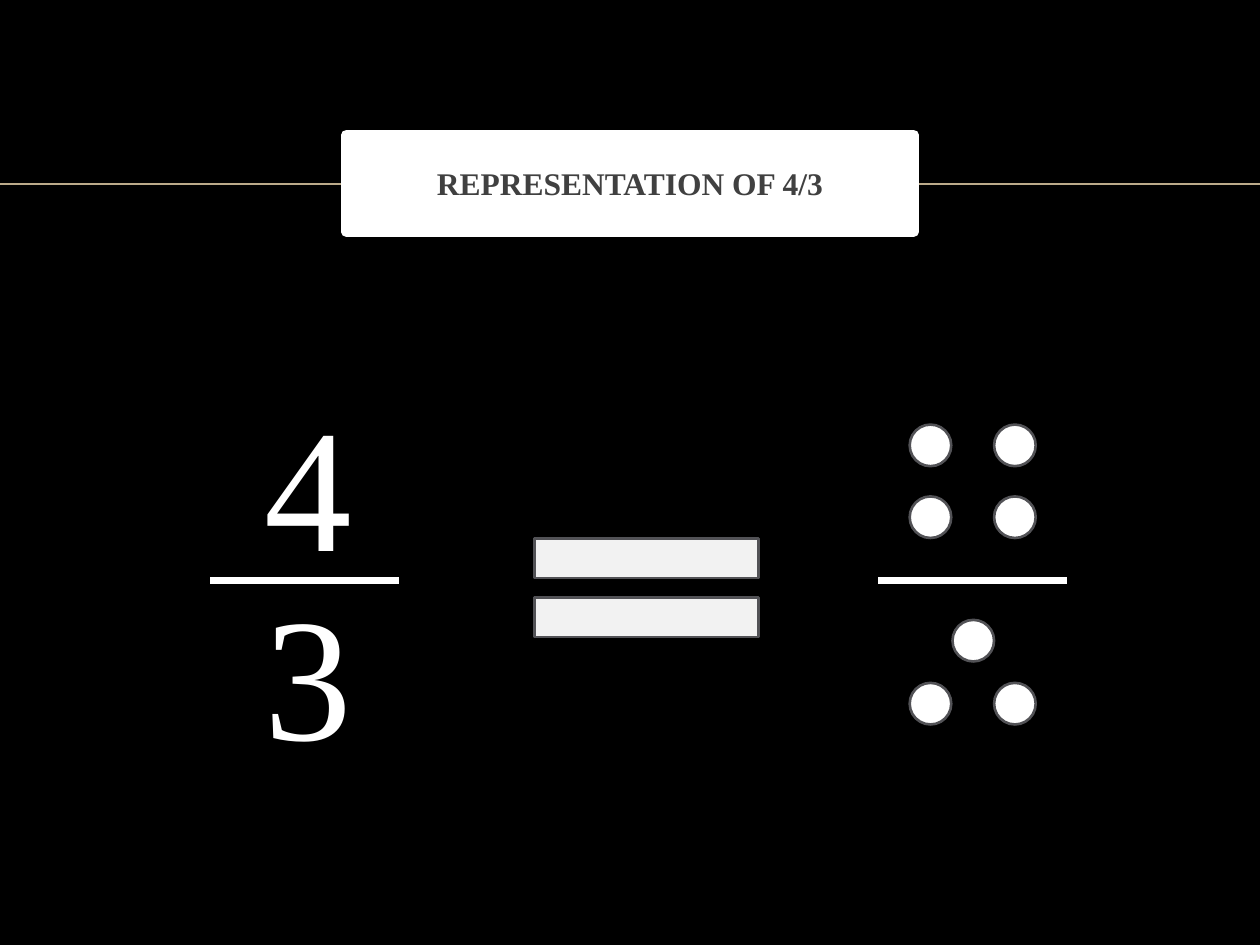
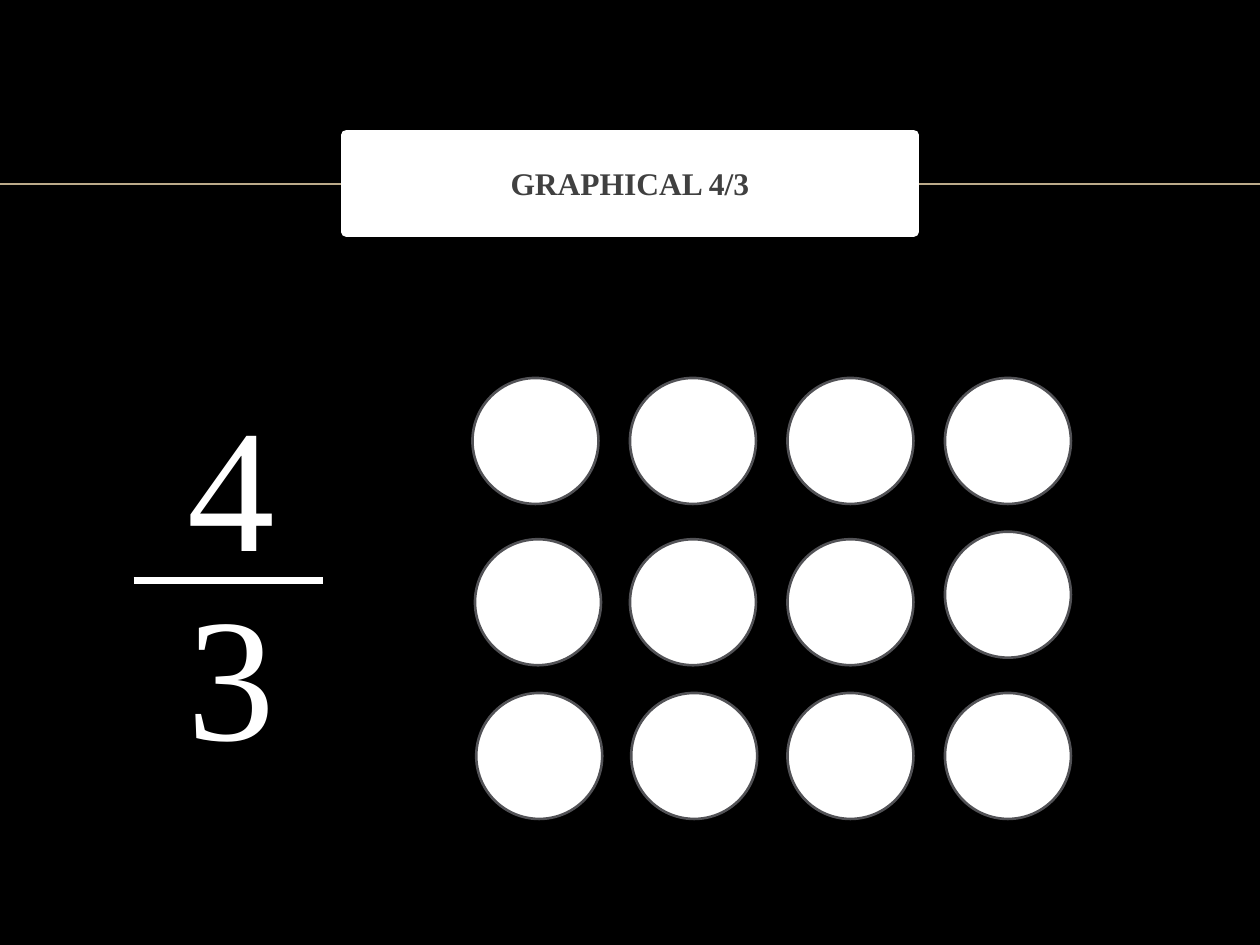
from dataclasses import dataclass

from lxml import etree
from pptx import Presentation
from pptx.dml.color import RGBColor
from pptx.enum.shapes import MSO_CONNECTOR, MSO_SHAPE
from pptx.enum.text import MSO_ANCHOR, MSO_AUTO_SIZE, PP_ALIGN
from pptx.oxml.ns import qn
from pptx.shapes.autoshape import Shape
from pptx.shapes.connector import Connector
from pptx.slide import Slide
from pptx.util import Inches, Pt

OVAL = MSO_SHAPE.OVAL
EQUAL_SIGN = MSO_SHAPE.MATH_EQUAL
STRAIGHT = MSO_CONNECTOR.STRAIGHT
MIDDLE = MSO_ANCHOR.MIDDLE
CENTER = PP_ALIGN.CENTER
GROW = MSO_AUTO_SIZE.SHAPE_TO_FIT_TEXT
FIXED = MSO_AUTO_SIZE.NONE

COLORS = {
    "background": "000000",
    "white": "FFFFFF",
    "rule": "BBAA8A",
    "title": "404040",
    "outline": "525256",
    "equals": "F2F2F2",
}
FONT = "Times New Roman"
SLIDE_WIDTH, SLIDE_HEIGHT = 10, 7.5
TITLE_ONLY = 5
RULE_Y = 1.46
BAR_Y, BAR_WIDTH = 4.61, 1.5
DIGIT_INDENT = 0.33
DIGIT_WIDTH, DIGIT_HEIGHT = 0.86, 1.78
DOT_SIZE, CIRCLE_SIZE = 0.33, 1


@dataclass(frozen=True)
class Box:
    left: float
    top: float
    width: float
    height: float

    def lengths(self) -> tuple:
        return tuple(map(Inches, (self.left, self.top, self.width, self.height)))


@dataclass(frozen=True)
class Row:
    top: float
    lefts: tuple


TITLE_BOX = Box(2.75, 1.07, 4.5, 0.77)
EQUALS_BOX = Box(3.92, 4, 2.42, 1.33)

# Four dots over three dots
DOT_PAIR = (7.22, 7.89)
DOT_ROWS = (
    Row(3.37, DOT_PAIR),
    Row(3.94, DOT_PAIR),
    Row(4.92, (7.56,)),
    Row(5.42, DOT_PAIR),
)

# Three rows of four circles; the last one of the middle row sits higher
CIRCLE_ROWS = (
    Row(3, (3.75, 5, 6.25, 7.5)),
    Row(4.28, (3.77, 5, 6.25)),
    Row(4.22, (7.5,)),
    Row(5.5, (3.78, 5.01, 6.25, 7.5)),
)


def color(key: str) -> RGBColor:
    return RGBColor.from_string(COLORS[key])


def paint(shape: Shape, fill: str, outline: str, line_width: float) -> None:
    shape.fill.solid()
    shape.fill.fore_color.rgb = color(fill)
    shape.line.color.rgb = color(outline)
    shape.line.width = Pt(line_width)


def style_text(shape: Shape, size: int, key: str, bold: bool = False) -> None:
    for run in shape.text_frame.paragraphs[0].runs:
        run.font.name = FONT
        run.font.size = Pt(size)
        run.font.bold = bold
        run.font.color.rgb = color(key)


def add_line(slide: Slide, left: float, y: float, width: float,
             key: str, weight: float) -> Connector:
    line = slide.shapes.add_connector(
        STRAIGHT, Inches(left), Inches(y), Inches(left + width), Inches(y))
    line.line.color.rgb = color(key)
    line.line.width = Pt(weight)
    etree.SubElement(line.element.spPr, qn("a:effectLst"))
    return line


def add_outlined(slide: Slide, kind: MSO_SHAPE, box: Box, fill: str) -> None:
    shape = slide.shapes.add_shape(kind, *box.lengths())
    shape.shadow.inherit = False
    paint(shape, fill, "outline", 1.5)


def add_titled_slide(prs: Presentation, heading: str) -> Slide:
    slide = prs.slides.add_slide(prs.slide_layouts[TITLE_ONLY])
    title = slide.shapes.title
    title.left, title.top, title.width, title.height = TITLE_BOX.lengths()
    paint(title, "white", "white", 6)
    frame = title.text_frame
    frame.text = heading
    frame.auto_size = FIXED
    frame.vertical_anchor = MIDDLE
    frame.paragraphs[0].alignment = CENTER
    style_text(title, 18, "title", bold=True)
    # The rule runs behind the title
    rule = add_line(slide, 0, RULE_Y, SLIDE_WIDTH, "rule", 1)
    title.element.addprevious(rule.element)
    return slide


def add_fraction_bar(slide: Slide, left: float) -> None:
    add_line(slide, left, BAR_Y, BAR_WIDTH, "white", 4)


def add_fraction(slide: Slide, left: float) -> None:
    for digit, top in (("4", 2.94), ("3", 4.44)):
        box = Box(left + DIGIT_INDENT, top, DIGIT_WIDTH, DIGIT_HEIGHT)
        number = slide.shapes.add_textbox(*box.lengths())
        number.text_frame.text = digit
        number.text_frame.word_wrap = False
        number.text_frame.auto_size = GROW
        style_text(number, 100, "white")
    add_fraction_bar(slide, left)


def add_circles(slide: Slide, rows: tuple, size: float) -> None:
    for row in rows:
        for left in row.lefts:
            add_outlined(slide, OVAL, Box(left, row.top, size, size), "white")


def main() -> None:
    prs = Presentation()
    prs.slide_width, prs.slide_height = Inches(SLIDE_WIDTH), Inches(SLIDE_HEIGHT)
    backdrop = prs.slide_master.background.fill
    backdrop.solid()
    backdrop.fore_color.rgb = color("background")

    # Slide 1: the fraction equals its dots
    representation = add_titled_slide(prs, "REPRESENTATION OF 4/3")
    add_fraction(representation, 1.67)
    add_fraction_bar(representation, 6.97)
    add_circles(representation, DOT_ROWS, DOT_SIZE)
    add_outlined(representation, EQUAL_SIGN, EQUALS_BOX, "equals")

    # Slide 2: the fraction beside its circles
    graphical = add_titled_slide(prs, "GRAPHICAL 4/3")
    add_fraction(graphical, 1.06)
    add_circles(graphical, CIRCLE_ROWS, CIRCLE_SIZE)

    prs.save("out.pptx")


if __name__ == "__main__":
    main()
